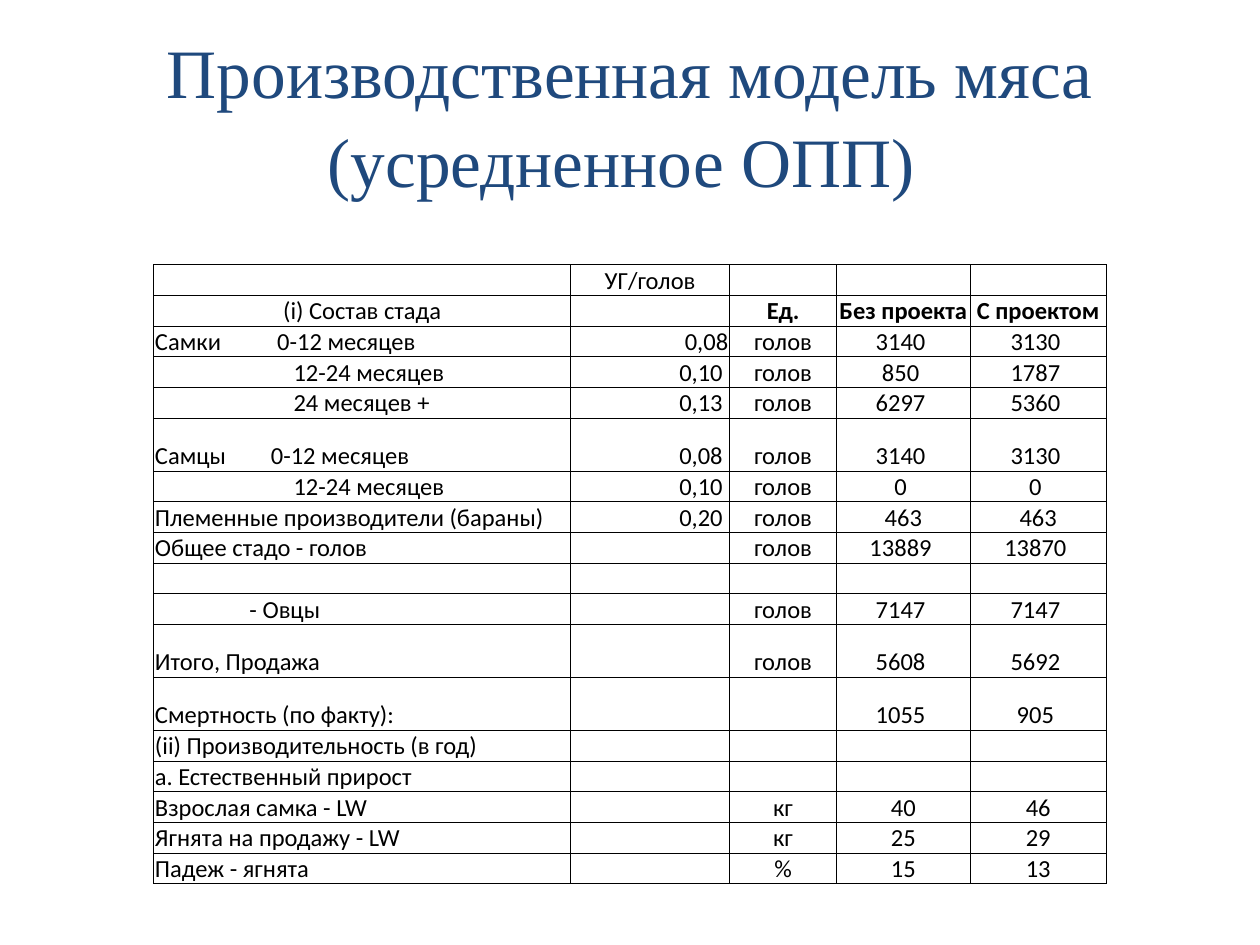
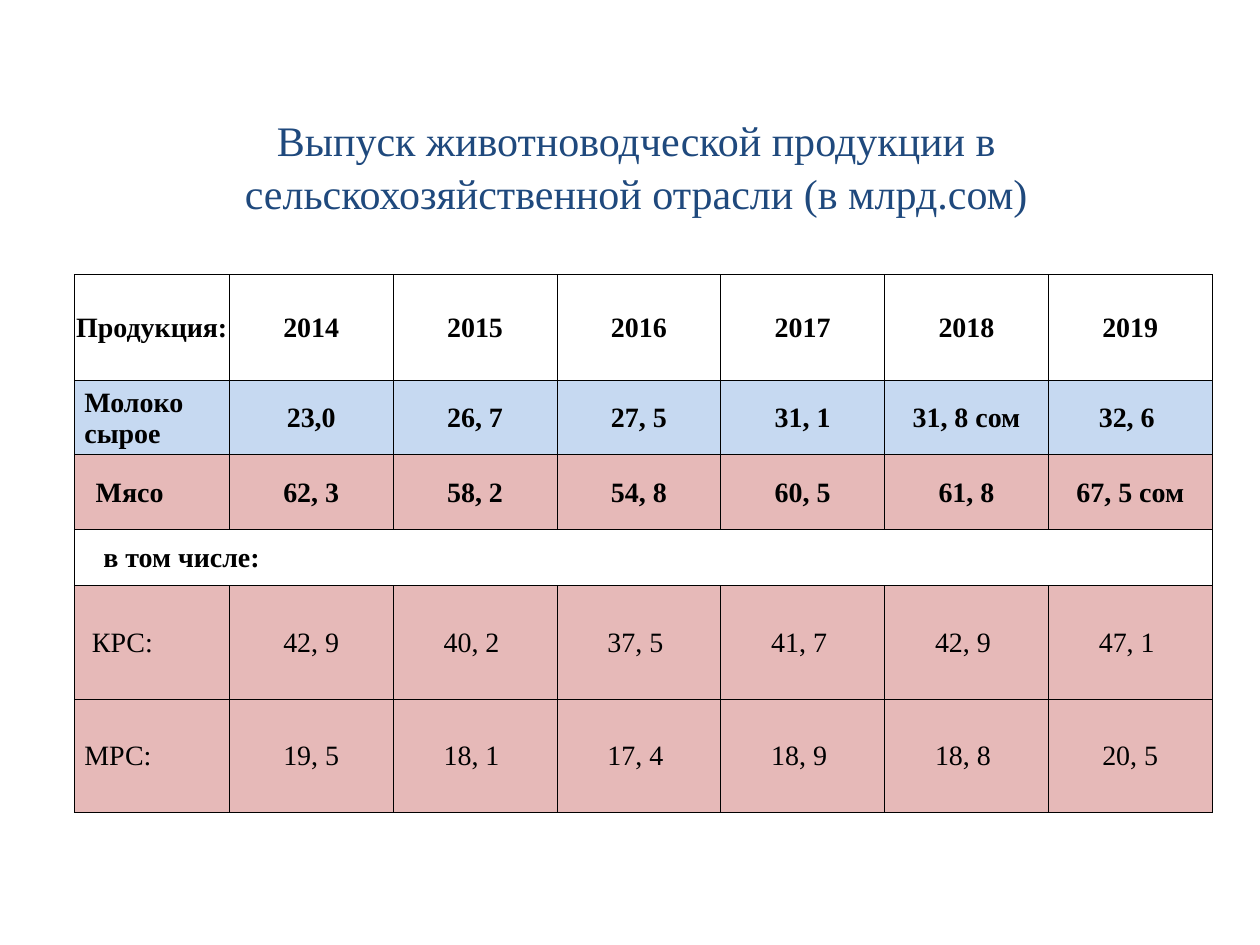
from lxml.etree import SubElement
from pptx import Presentation
from pptx.dml.color import RGBColor
from pptx.enum.text import MSO_ANCHOR, PP_ALIGN
from pptx.oxml import parse_xml
from pptx.oxml.ns import nsdecls, qn
from pptx.util import Inches, Pt

COLORS = {"title": "1F497D", "text": "000000", "border": "000000",
          "milk": "C6D9F1", "meat": "E6B9B8"}
SERIF, SANS = "Times New Roman", "Calibri"
LEFT, CENTER, RIGHT = PP_ALIGN.LEFT, PP_ALIGN.CENTER, PP_ALIGN.RIGHT


def write(tf, text, font=SERIF, size=16, color="text", bold=False,
          align=CENTER, spacing=None):
    """Fill the first paragraph of a text frame with one formatted run."""
    p = tf.paragraphs[0]
    p.alignment = align
    if spacing:
        p.line_spacing = spacing
    if not text:
        # An empty cell keeps the font size so that its row stays low
        SubElement(p._p, qn("a:endParaRPr"), sz=str(size * 100))
        return p
    r = p.add_run()
    r.text = text
    r.font.name, r.font.size, r.font.bold = font, Pt(size), bold
    r.font.color.rgb = RGBColor.from_string(COLORS[color])
    return p


def add_tab_stop(p, pos):
    tabs = SubElement(p._p.get_or_add_pPr(), qn("a:tabLst"))
    SubElement(tabs, qn("a:tab"), pos=str(Inches(pos)), algn="l")


class Deck:
    def __init__(self):
        self.prs = Presentation()
        self.prs.slide_width, self.prs.slide_height = Inches(10), Inches(7.5)
        self.s = None

    def slide(self):
        self.s = self.prs.slides.add_slide(self.prs.slide_layouts[6])

    def title(self, text, x, y, size):
        sp = self.s.shapes.add_textbox(Inches(x), Inches(y), Inches(9), Inches(1.25))
        tf = sp.text_frame
        tf.word_wrap = True
        tf.vertical_anchor = MSO_ANCHOR.MIDDLE
        write(tf, text, size=size, color="title", spacing=1.06)

    def table(self, x, y, widths, heights):
        frame = self.s.shapes.add_table(
            len(heights), len(widths), Inches(x), Inches(y),
            Inches(sum(widths)), Inches(sum(heights)))
        tbl = frame.table
        tbl.first_row = tbl.horz_banding = False
        for col, w in zip(tbl.columns, widths):
            col.width = Inches(w)
        for row, h in zip(tbl.rows, heights):
            row.height = Inches(h)
        return tbl

    def cell(self, cell, text, fill=None, anchor=MSO_ANCHOR.MIDDLE,
             indent=0.01, tab=None, **fmt):
        cell.margin_left = Inches(indent)
        cell.margin_right = cell.margin_top = Inches(0.01)
        cell.margin_bottom = 0
        cell.vertical_anchor = anchor
        if fill:
            cell.fill.solid()
            cell.fill.fore_color.rgb = RGBColor.from_string(COLORS[fill])
        else:
            cell.fill.background()
        p = write(cell.text_frame, text, **fmt)
        if tab:
            add_tab_stop(p, tab)
        self.borders(cell)

    def borders(self, cell):
        tc_pr = cell._tc.get_or_add_tcPr()
        for i, side in enumerate(("lnL", "lnR", "lnT", "lnB")):
            tc_pr.insert(i, parse_xml(
                f'<a:{side} {nsdecls("a")} w="{Pt(0.5)}"><a:solidFill>'
                f'<a:srgbClr val="{COLORS["border"]}"/></a:solidFill></a:{side}>'))


def herd_slide(d):
    d.slide()
    d.title("Производственная модель мяса (усредненное ОПП) ", 0.5, 0.27, 39.6)

    # Label, sheep units per head, unit, without project, with project
    rows = [
        ("", "УГ/голов", "", "", ""),
        ("(i) Состав стада", "", "Ед.", "Без проекта", "С проектом"),
        ("Самки\t0-12 месяцев", "0,08", "голов", "3140 ", "3130 "),
        ("12-24 месяцев", "0,10 ", "голов", "850 ", "1787 "),
        ("24 месяцев +", "0,13 ", "голов", "6297 ", "5360 "),
        ("Самцы\t0-12 месяцев", "0,08 ", "голов", "3140 ", "3130 "),
        ("12-24 месяцев", "0,10 ", "голов", "0 ", "0 "),
        ("Племенные производители (бараны)", "0,20 ", "голов", "463", "463"),
        ("Общее стадо - голов", "", "голов", "13889 ", "13870 "),
        ("", "", "", "", ""),
        ("- Овцы", "", "голов", "7147 ", "7147 "),
        ("Итого, Продажа", "", "голов", "5608 ", "5692 "),
        ("Смертность (по факту):", "", "", "1055 ", "905 "),
        ("(ii) Производительность (в год)", "", "", "", ""),
        ("a. Естественный прирост", "", "", "", ""),
        ("Взрослая самка - LW", "", "кг", "40", "46"),
        ("Ягнята на продажу - LW", "", "кг", "25", "29"),
        ("Падеж - ягнята", "", "%", "15", "13"),
    ]
    indents = {"12-24 месяцев": 1.11, "24 месяцев +": 1.11, "- Овцы": 0.76}
    tabs = {"Самки\t0-12 месяцев": 0.97, "Самцы\t0-12 месяцев": 0.92}
    tall_rows = (5, 11, 12)
    heights = [0.42 if i in tall_rows else 0.21 for i in range(len(rows))]
    tbl = d.table(1.22, 2.1, [3.31, 1.26, 0.85, 1.06, 1.08], heights)

    body_align = (LEFT, RIGHT, CENTER, CENTER, CENTER)
    for i, row in enumerate(rows):
        for j, text in enumerate(row):
            d.cell(tbl.cell(i, j), text, font=SANS, size=14,
                   anchor=MSO_ANCHOR.BOTTOM, bold=i == 1 and j > 1,
                   align=CENTER if i < 2 else body_align[j],
                   indent=indents.get(text, 0.01), tab=tabs.get(text))


def output_slide(d):
    d.slide()
    d.title("Выпуск животноводческой продукции в сельскохозяйственной "
            "отрасли (в млрд.сом)", 0.55, 0.68, 24)

    # Fill, label indent, row height, bold, texts
    rows = [
        (None, 0.01, 0.84, True,
         ("Продукция:", *(str(year) for year in range(2014, 2020)))),
        ("milk", 0.08, 0.59, True,
         ("Молоко сырое", "23,0", "26, 7", "27, 5", "31, 1", "31, 8 сом", "32, 6 ")),
        ("meat", 0.17, 0.59, True,
         ("Мясо", "62, 3", "58, 2", "54, 8", "60, 5", "61, 8", "67, 5 сом")),
        (None, 0.23, 0.45, True, ("в том числе:",) + ("",) * 6),
        ("meat", 0.14, 0.9, False,
         ("КРС:", "42, 9", "40, 2 ", "37, 5 ", "41, 7 ", "42, 9 ", "47, 1 ")),
        ("meat", 0.08, 0.9, False,
         ("МРС:", "19, 5", "18, 1 ", "17, 4 ", "18, 9 ", "18, 8 ", "20, 5")),
    ]
    tbl = d.table(0.59, 2.18, [1.23] + [1.3] * 6, [row[2] for row in rows])
    for i, (fill, indent, _, bold, texts) in enumerate(rows):
        for j, text in enumerate(texts):
            is_label = j == 0 and i > 0
            d.cell(tbl.cell(i, j), text, fill=fill, bold=bold,
                   align=LEFT if is_label else CENTER,
                   indent=indent if is_label else 0.01)
    tbl.cell(3, 0).merge(tbl.cell(3, 6))


def main():
    d = Deck()
    herd_slide(d)
    output_slide(d)
    d.prs.save("out.pptx")


if __name__ == "__main__":
    main()
